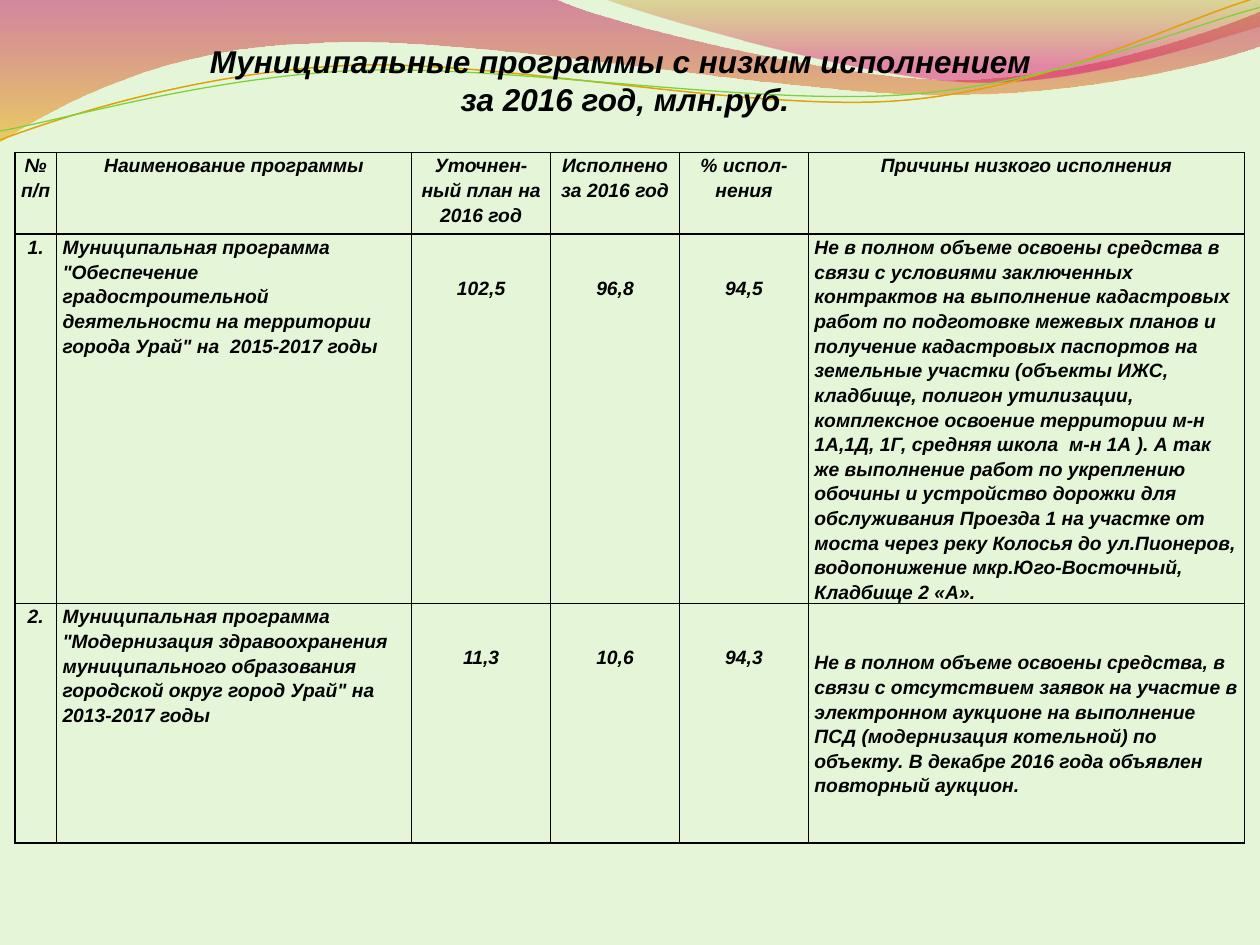
from itertools import product
from math import cos, radians, sin

from lxml import etree
from pptx import Presentation
from pptx.dml.color import RGBColor
from pptx.enum.text import MSO_ANCHOR, PP_ALIGN
from pptx.oxml.ns import qn
from pptx.util import Cm, Pt

INK = "000000"
FONT = "Arial"
STRAND_TILT = 2.7

PINK_WAVE = [
    [(0, 0)], [(11.18, -0.03)],
    [(12.09, 0.43), (16.87, 1.6), (19.25, 1.6)],
    [(21.67, 1.6), (24.33, 0.66), (25.4, 0.23)],
    [(25.43, 0.91)],
    [(24.97, 1.12), (22.1, 1.93), (18.95, 1.91)],
    [(15.8, 1.91), (9.7, 0.71), (6.53, 0.86)],
    [(3.28, 0.91), (1.17, 2.11), (-0.03, 2.87)],
]
OLIVE_WAVE = [
    [(12.17, -0.03)],
    [(12.93, 0.28), (17.32, 1.57), (19.53, 1.65)],
    [(21.74, 1.75), (24.41, 0.81), (25.4, 0.53)],
    [(25.4, 0)],
]
ORANGE_STRAND = [
    [(0, 2.82)],
    [(1.22, 2.36), (4.01, 1.45), (7.04, 1.32)],
    [(10.03, 1.19), (15.06, 2.26), (18.11, 2.03)],
    [(21.16, 1.8), (23.83, 0.38), (25.35, -0.05)],
]
GREEN_STRAND = [
    [(0, 2.64)],
    [(1.19, 2.44), (4.17, 1.55), (7.19, 1.42)],
    [(10.24, 1.3), (15.16, 2.13), (18.21, 1.91)],
    [(21.23, 1.7), (23.9, 0.53), (25.4, 0.15)],
]

COLUMN_WIDTHS = [0.84, 7.16, 2.8, 2.6, 2.6, 8.79]
ROW_HEIGHTS = [1.65, 7.41, 4.83]
NUMBER_COLUMN, VALUE_COLUMNS, REASON_COLUMN = 0, (2, 3, 4), 5
PROGRAMS = [
    ["№ п/п", "Наименование программы", "Уточнен-ный план на 2016 год",
     "Исполнено за 2016 год", "% испол-нения", "Причины низкого исполнения"],
    ["1.",
     'Муниципальная программа "Обеспечение градостроительной деятельности '
     'на территории города Урай" на  2015-2017 годы',
     "102,5", "96,8", "94,5",
     "Не в полном объеме освоены средства в связи с условиями заключенных "
     "контрактов на выполнение кадастровых работ по подготовке межевых планов "
     "и получение кадастровых паспортов на земельные участки (объекты ИЖС, "
     "кладбище, полигон утилизации, комплексное освоение территории м-н "
     "1А,1Д, 1Г, средняя школа  м-н 1А ). А так же выполнение работ по "
     "укреплению обочины и устройство дорожки для обслуживания Проезда 1 на "
     "участке от моста через реку Колосья до ул.Пионеров, водопонижение "
     "мкр.Юго-Восточный, Кладбище 2 «А»."],
    ["2.",
     'Муниципальная программа "Модернизация здравоохранения муниципального '
     'образования городской округ город Урай" на 2013-2017 годы',
     "11,3", "10,6", "94,3",
     "Не в полном объеме освоены средства, в связи с отсутствием заявок на "
     "участие в электронном аукционе на выполнение ПСД (модернизация "
     "котельной) по объекту. В декабре 2016 года объявлен повторный аукцион."],
]


def color(value):
    """Turn a hex string into a colour."""
    return RGBColor.from_string(value)


def add_run(paragraph, text, size):
    """Add one bold italic run."""
    run = paragraph.add_run()
    run.text = text
    font = run.font
    font.name, font.size, font.bold, font.italic = FONT, Pt(size), True, True
    font.color.rgb = color(INK)


def add_outline(slide, left, top, segments, close):
    """Build a freeform of straight and cubic segments relative to a corner."""
    placed = [[(Cm(left + x), Cm(top + y)) for x, y in segment] for segment in segments]
    start, *ends = [segment[-1] for segment in placed]
    builder = slide.shapes.build_freeform(*start, scale=1.0)
    builder.add_line_segments(ends, close=close)
    outline = builder.convert_to_shape()
    outline.shadow.inherit = False
    straight_lines = list(outline._element.iter(qn("a:lnTo")))
    for straight, segment in zip(straight_lines, placed[1:]):
        if len(segment) == 3:
            curve = etree.Element(qn("a:cubicBezTo"))
            for x, y in segment:
                etree.SubElement(curve, qn("a:pt"), x=str(x - outline.left),
                                 y=str(y - outline.top))
            straight.getparent().replace(straight, curve)
    return outline


def add_wave(slide, left, top, segments, stops):
    """Add a translucent wave that fades from top to bottom."""
    wave = add_outline(slide, left, top, segments, True)
    wave.line.fill.background()
    wave.fill.gradient()
    wave.fill.gradient_angle = 270
    for stop, (position, tint, _) in zip(wave.fill.gradient_stops, stops):
        stop.position = position
        stop.color.rgb = color(tint)
    tints = wave._element.spPr.iter(qn("a:srgbClr"))
    for tint_element, (_, _, opacity) in zip(tints, stops):
        etree.SubElement(tint_element, qn("a:alpha"), val=str(opacity * 1000))


def level(segments, center_x, center_y):
    """Turn the points clockwise by the tilt of the strands."""
    c, s = cos(radians(STRAND_TILT)), sin(radians(STRAND_TILT))
    return [[(center_x + (x - center_x) * c - (y - center_y) * s,
              center_y + (x - center_x) * s + (y - center_y) * c)
             for x, y in segment] for segment in segments]


def add_strand(slide, left, top, segments, tint, width):
    """Add a thin curved line, tilted upwards."""
    strand = add_outline(slide, left, top, level(segments, 12.68, 1.48), False)
    strand.rotation = 360 - STRAND_TILT
    strand.fill.background()
    strand.line.color.rgb = color(tint)
    strand.line.width = Pt(width)


def add_header_waves(slide, left, top):
    """Draw the decorative band along the top."""
    add_wave(slide, left, top, PINK_WAVE, [(0, "BD0059", 45), (1, "F0AB00", 55)])
    add_wave(slide, left, top, OLIVE_WAVE, [(0, "C38B00", 30), (0.8, "E1006B", 45)])
    add_strand(slide, left, top, ORANGE_STRAND, "E0A209", 0.85)
    add_strand(slide, left, top, GREEN_STRAND, "7FD13B", 0.75)


def add_title(slide, left, top, width, height):
    """Add the two-line title."""
    frame = slide.shapes.add_textbox(Cm(left), Cm(top), Cm(width), Cm(height)).text_frame
    frame.word_wrap = True
    lines = ["Муниципальные программы с низким исполнением ", "за 2016 год, млн.руб."]
    for index, line in enumerate(lines):
        paragraph = frame.add_paragraph() if index else frame.paragraphs[0]
        paragraph.alignment = PP_ALIGN.CENTER
        add_run(paragraph, line, 18)


def add_borders(cell):
    """Rule all four sides of a cell."""
    properties = cell._tc.get_or_add_tcPr()
    for index, side in enumerate(("lnL", "lnR", "lnT", "lnB")):
        border = etree.Element(qn(f"a:{side}"), w=str(Pt(1)))
        solid = etree.SubElement(border, qn("a:solidFill"))
        etree.SubElement(solid, qn("a:srgbClr"), val=INK)
        properties.insert(index, border)


def add_programs_table(slide, left, top, width, height):
    """Add the table of programs."""
    table = slide.shapes.add_table(len(ROW_HEIGHTS), len(COLUMN_WIDTHS), Cm(left),
                                   Cm(top), Cm(width), Cm(height)).table
    table.first_row = table.horz_banding = False
    for column, column_width in zip(table.columns, COLUMN_WIDTHS):
        column.width = Cm(column_width)
    for row, row_height in zip(table.rows, ROW_HEIGHTS):
        row.height = Cm(row_height)
    for r, c in product(range(len(ROW_HEIGHTS)), range(len(COLUMN_WIDTHS))):
        cell = table.cell(r, c)
        is_value = r > 0 and c in VALUE_COLUMNS
        cell.fill.background()
        add_borders(cell)
        cell.margin_left = cell.margin_right = Cm(0.03 if is_value else 0.12)
        cell.margin_top = Cm(0.89 if is_value else 0)
        cell.margin_bottom = Cm(0)
        is_reason = r > 0 and c == REASON_COLUMN
        cell.vertical_anchor = MSO_ANCHOR.MIDDLE if is_reason else MSO_ANCHOR.TOP
        paragraph = cell.text_frame.paragraphs[0]
        centred = r == 0 or c == NUMBER_COLUMN or is_value
        paragraph.alignment = PP_ALIGN.CENTER if centred else PP_ALIGN.LEFT
        paragraph.line_spacing = 1.0 if is_value else 1.15
        add_run(paragraph, PROGRAMS[r][c], 11)


def main():
    """Build and save the slide."""
    presentation = Presentation()
    presentation.slide_width, presentation.slide_height = Cm(25.4), Cm(19.05)
    slide = presentation.slides.add_slide(presentation.slide_layouts[6])
    slide.background.fill.solid()
    slide.background.fill.fore_color.rgb = color("E5F6D8")
    add_header_waves(slide, 0, 0)
    add_programs_table(slide, 0.3, 3.07, sum(COLUMN_WIDTHS), sum(ROW_HEIGHTS))
    add_title(slide, 0.5, 0.72, 24.2, 1.8)
    presentation.save("out.pptx")


if __name__ == "__main__":
    main()
